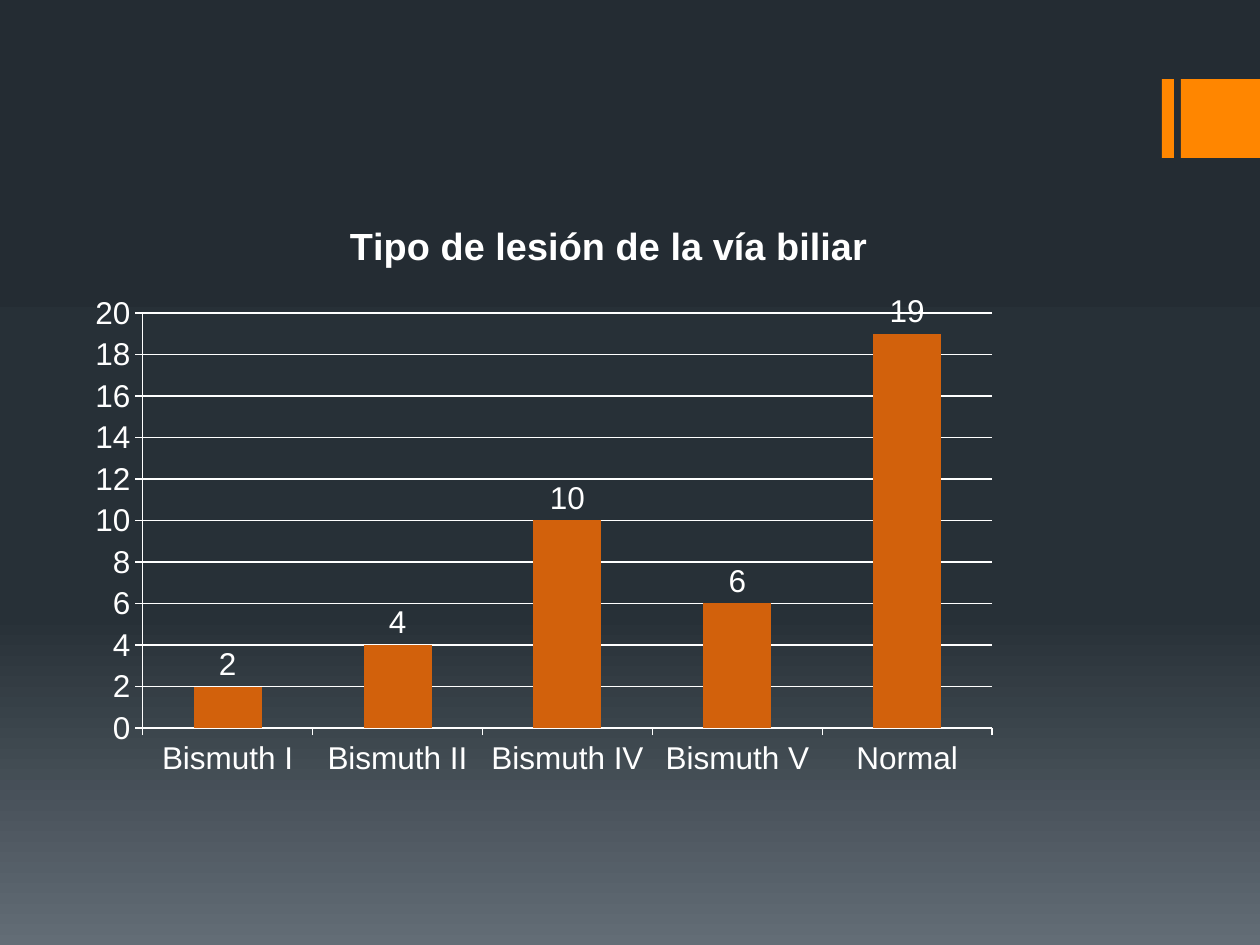
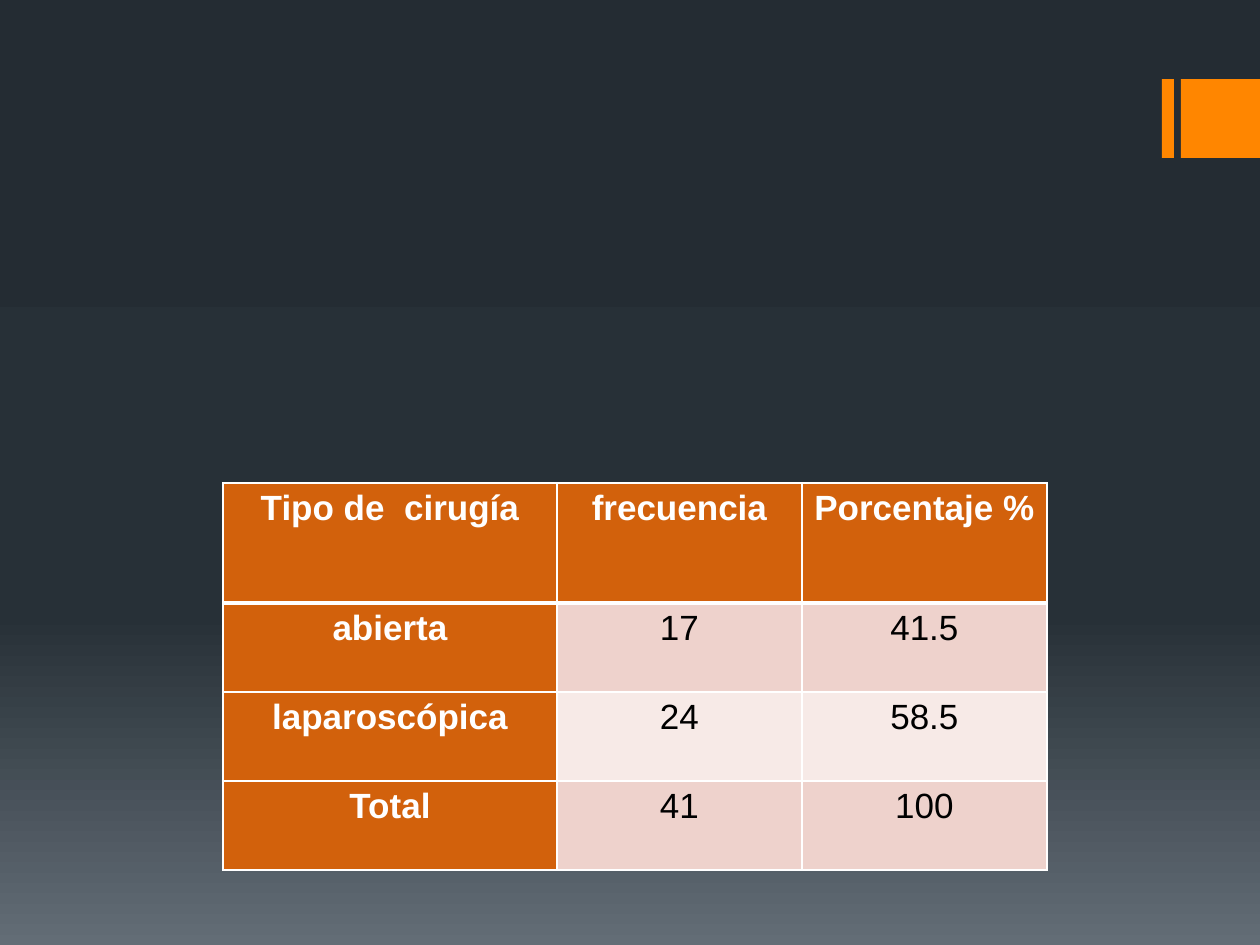
from copy import deepcopy

from lxml import etree
from pptx import Presentation
from pptx.chart.data import CategoryChartData
from pptx.dml.color import RGBColor
from pptx.enum.chart import XL_CHART_TYPE, XL_LABEL_POSITION, XL_TICK_MARK
from pptx.enum.shapes import MSO_SHAPE
from pptx.enum.text import PP_ALIGN
from pptx.oxml import parse_xml
from pptx.oxml.ns import nsdecls, qn
from pptx.util import Emu, Pt

COLUMNS = XL_CHART_TYPE.COLUMN_CLUSTERED
ABOVE_BAR = XL_LABEL_POSITION.OUTSIDE_END
TICK_OUT = XL_TICK_MARK.OUTSIDE
RECTANGLE = MSO_SHAPE.RECTANGLE
CENTER = PP_ALIGN.CENTER

SLIDE_SIZE = (1260, 945)
FONT = "Arial"
WHITE, BLACK = "FFFFFF", "000000"
ACCENT, RUST = "FF8600", "D2610C"
ROW_TINTS = ("EED2CC", "F7EAE7")
BACKDROP = ((0, "242C33"), (0.65, "273037"), (1, "636D76"))

LESIONS = {"Bismuth I": 2, "Bismuth II": 4, "Bismuth IV": 10,
           "Bismuth V": 6, "Normal": 19}
SURGERIES = (
    ("Tipo de  cirugía", "frecuencia", "Porcentaje %"),
    ("abierta", "17", "41.5"),
    ("laparoscópica", "24", "58.5"),
    ("Total", "41", "100"),
)


def px(length):
    return Emu(round(length * 914400 / 126))


def rgb(hex_color):
    return RGBColor.from_string(hex_color)


def set_font(font, size, color, bold=False):
    font.name, font.size, font.bold = FONT, Pt(size), bold
    font.color.rgb = rgb(color)


def paint_backdrop(master):
    fill = master.background.fill
    fill.gradient()
    fill.gradient_angle = 270
    stops = master.element.find(".//" + qn("a:gsLst"))
    stops.append(deepcopy(stops[-1]))
    for stop, (position, color) in zip(fill.gradient_stops, BACKDROP):
        stop.position = position
        stop.color.rgb = rgb(color)


def add_corner_bands(slide, left, top, height):
    """Draw a thin bar and a square that ends at the right slide edge."""
    for offset, width in ((0, 12), (19, SLIDE_SIZE[0] - left - 19)):
        band = slide.shapes.add_shape(
            RECTANGLE, px(left + offset), px(top), px(width), px(height))
        band.shadow.inherit = False
        band.fill.solid()
        band.fill.fore_color.rgb = rgb(ACCENT)
        band.line.fill.background()


def add_slide(prs):
    slide = prs.slides.add_slide(prs.slide_layouts[6])
    add_corner_bands(slide, 1162, 79, 79)
    return slide


def place_plot(chart, x, y, w, h):
    """Fix the inner plot area, in fractions of the chart."""
    plot_area = chart.element.find(".//" + qn("c:plotArea"))
    for automatic in plot_area.findall(qn("c:layout")):
        plot_area.remove(automatic)
    settings = {"layoutTarget": "inner", "xMode": "edge", "yMode": "edge",
                "x": x, "y": y, "w": w, "h": h}
    layout = etree.Element(qn("c:layout"))
    manual = etree.SubElement(layout, qn("c:manualLayout"))
    for name, value in settings.items():
        etree.SubElement(manual, qn("c:" + name), val=str(value))
    plot_area.insert(0, layout)


def add_lesion_chart(slide, left, top, width, height):
    data = CategoryChartData()
    data.categories = list(LESIONS)
    data.add_series("Series 1", list(LESIONS.values()))
    chart = slide.shapes.add_chart(
        COLUMNS, px(left), px(top), px(width), px(height), data).chart
    set_font(chart.font, 18, WHITE)
    chart.has_legend = False

    chart.has_title = True
    heading = chart.chart_title.text_frame
    heading.text = "Tipo de lesión de la vía biliar"
    set_font(heading.paragraphs[0].font, 21.6, WHITE, bold=True)
    chart.chart_title.include_in_layout = False
    place_plot(chart, 0.056, 0.175, 0.809, 0.616)

    counts = chart.value_axis
    counts.minimum_scale, counts.maximum_scale, counts.major_unit = 0, 20, 2
    counts.has_major_gridlines = True
    for axis in (chart.category_axis, counts):
        axis.major_tick_mark = TICK_OUT
    for line in (chart.category_axis.format.line, counts.format.line,
                 counts.major_gridlines.format.line):
        line.color.rgb = rgb(WHITE)
        line.width = Pt(0.75)

    bars = chart.plots[0]
    bars.gap_width = 150
    bars.vary_by_categories = False
    bars.series[0].format.fill.solid()
    bars.series[0].format.fill.fore_color.rgb = rgb(RUST)
    bars.has_data_labels = True
    bars.data_labels.show_value = True
    bars.data_labels.position = ABOVE_BAR
    set_font(bars.data_labels.font, 18, WHITE)


def set_borders(cell, **widths):
    """Give each named side (L, R, T, B) a white line of that many points."""
    properties = cell._tc.get_or_add_tcPr()
    for index, (side, width) in enumerate(widths.items()):
        properties.insert(index, parse_xml(
            f'<a:ln{side} {nsdecls("a")} w="{Pt(width)}"><a:solidFill>'
            f'<a:srgbClr val="{WHITE}"/></a:solidFill></a:ln{side}>'))


def add_surgery_table(slide, left, top, column_widths, header_height, row_height):
    body_rows = len(SURGERIES) - 1
    table = slide.shapes.add_table(
        len(SURGERIES), len(column_widths), px(left), px(top),
        px(sum(column_widths)), px(header_height + body_rows * row_height)).table
    for column, width in zip(table.columns, column_widths):
        column.width = px(width)
    for r, texts in enumerate(SURGERIES):
        table.rows[r].height = px(row_height if r else header_height)
        for c, text in enumerate(texts):
            heading = r == 0 or c == 0
            cell = table.cell(r, c)
            cell.text = text
            cell.margin_left = cell.margin_right = px(9)
            cell.margin_top = cell.margin_bottom = 0
            cell.fill.solid()
            cell.fill.fore_color.rgb = rgb(RUST if heading else ROW_TINTS[(r - 1) % 2])
            paragraph = cell.text_frame.paragraphs[0]
            paragraph.alignment = CENTER
            paragraph.line_spacing = 1.15
            set_font(paragraph.font, 20, WHITE if heading else BLACK, heading)
            set_borders(cell, L=1, R=1, T=3 if r == 1 else 1, B=1 if r else 3)


def main():
    prs = Presentation()
    prs.slide_width, prs.slide_height = map(px, SLIDE_SIZE)
    paint_backdrop(prs.slide_master)
    add_lesion_chart(add_slide(prs), 84, 195, 1050, 674)
    add_surgery_table(add_slide(prs), 223, 483, (334, 245, 245), 120, 89)
    prs.save("out.pptx")


if __name__ == "__main__":
    main()
